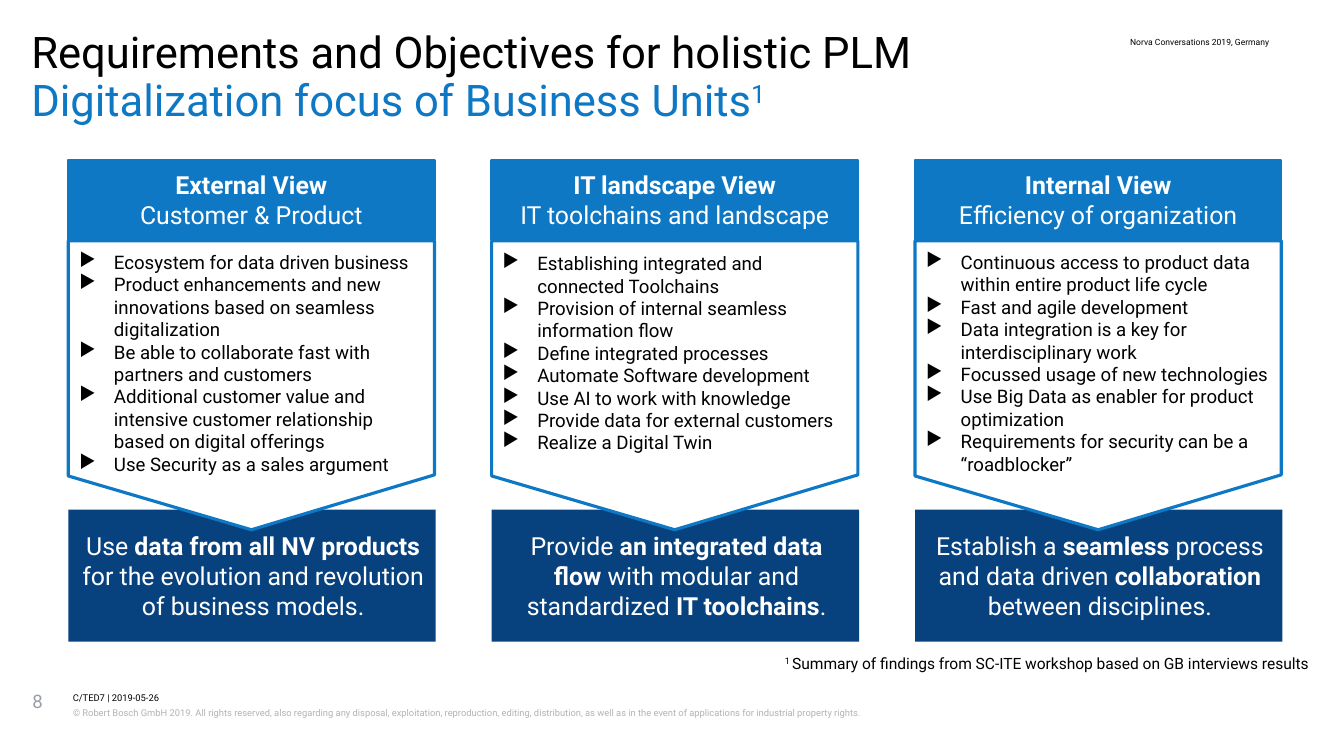
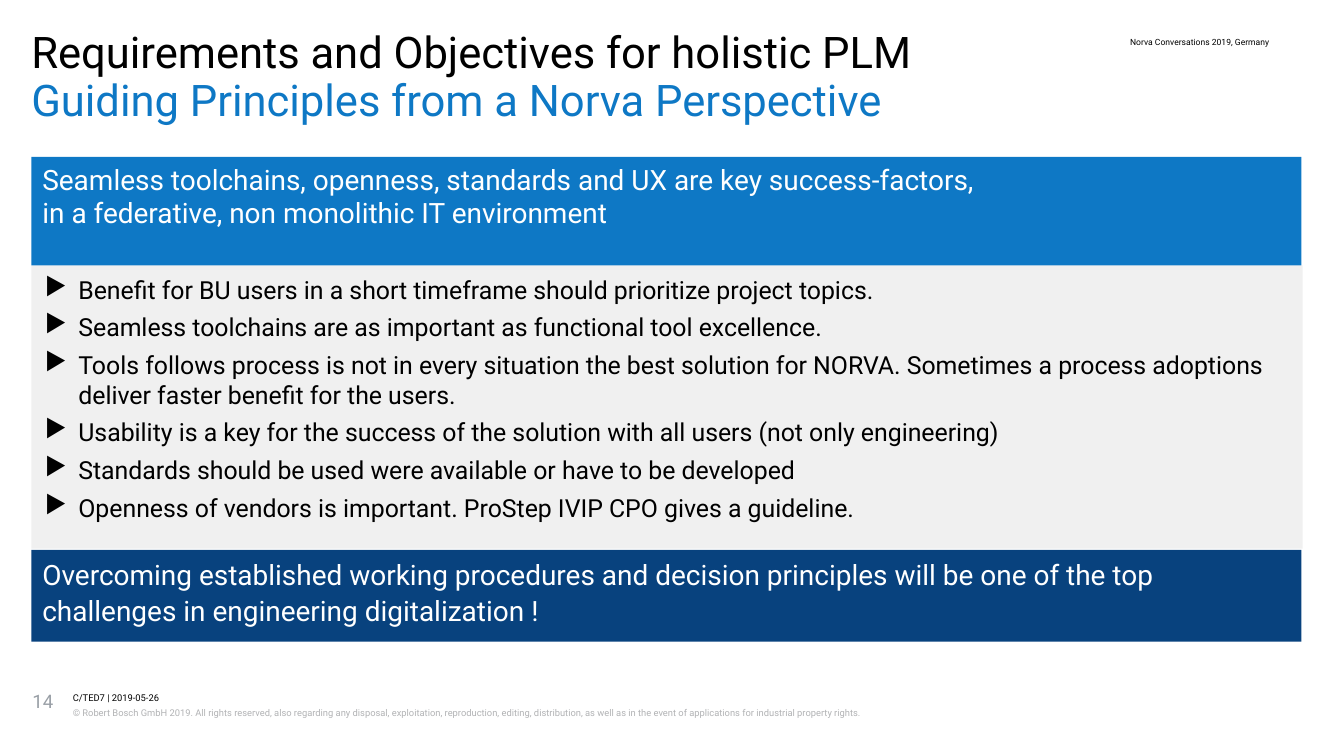
from dataclasses import dataclass
from typing import Any, NamedTuple

from lxml import etree
from pptx import Presentation
from pptx.dml.color import RGBColor
from pptx.enum.shapes import MSO_SHAPE
from pptx.enum.text import MSO_ANCHOR, PP_ALIGN
from pptx.oxml.ns import qn
from pptx.util import Inches, Pt

COLORS = {
    "black": "000000",
    "white": "FFFFFF",
    "blue": "0E78C5",
    "navy": "08427E",
    "panel": "F0F0F0",
    "number": "999FA6",
    "copyright": "B2B3B5",
}
FONT = "Roboto"
NO_INSETS = (0, 0, 0, 0)
DEFAULT_INSETS = (0.1, 0.05, 0.1, 0.05)


class Box(NamedTuple):
    left: float
    top: float
    width: float
    height: float

    def lengths(self) -> list[int]:
        return [Inches(value) for value in self]


class Run(NamedTuple):
    text: str
    bold: bool = False
    raised: bool = False


@dataclass(frozen=True)
class TextStyle:
    size: float
    color: str = "black"
    align: Any = PP_ALIGN.LEFT
    anchor: Any = MSO_ANCHOR.TOP
    insets: tuple = DEFAULT_INSETS
    line_spacing: Any = None
    space_before: float = 0
    space_after: float = 0
    indent: float = 0
    bullet: str = ""


@dataclass(frozen=True)
class View:
    name: str
    subject: str
    needs: list
    goal: list
    needs_top: float = 2.19


TITLE = TextStyle(28, insets=NO_INSETS, line_spacing=0.89)
SUBTITLE = TextStyle(28, "blue", insets=NO_INSETS, line_spacing=0.89)
EVENT = TextStyle(5.5, insets=(0, 0.02, 0, 0), line_spacing=Pt(9))
DEPARTMENT = TextStyle(6, insets=NO_INSETS, line_spacing=1.07, space_after=1)
COPYRIGHT = TextStyle(6, "copyright", insets=NO_INSETS, line_spacing=1.2, space_after=1)
PAGE_NUMBER = TextStyle(12, "number", insets=NO_INSETS)
VIEW_HEADER = TextStyle(16, "white", PP_ALIGN.CENTER, MSO_ANCHOR.MIDDLE,
                        (0.08, 0.05, 0.08, 0.05))
VIEW_NEEDS = TextStyle(12, anchor=MSO_ANCHOR.MIDDLE, indent=0.31, bullet="▶")
VIEW_GOAL = TextStyle(16, "white", PP_ALIGN.CENTER, MSO_ANCHOR.MIDDLE,
                      (0.12, 0.05, 0.1, 0.05))
FOOTNOTE = TextStyle(10, indent=0.78)
BAND = TextStyle(18, "white")
SPACED_BAND = TextStyle(18, "white", line_spacing=1.07)
PRINCIPLES = TextStyle(16, insets=(0.12, 0.08, 0, 0), space_before=5, indent=0.3, bullet="▶")

COLUMN_LEFT, COLUMN_PITCH, COLUMN_WIDTH = 0.61, 3.78, 3.27
HEADER_TOP, POINTER_TOP, GOAL_TOP = 1.43, 2.15, 4.55

VIEWS = [
    View(
        "External View",
        "Customer & Product",
        [
            "Ecosystem for data driven business",
            "Product enhancements and new innovations based on seamless digitalization",
            "Be able to collaborate fast with partners and customers",
            "Additional customer value and intensive customer relationship based on digital offerings",
            "Use Security as a sales argument",
        ],
        [
            Run("Use "),
            Run("data from all NV products ", bold=True),
            Run("for the evolution and revolution of business models."),
        ],
    ),
    View(
        "IT landscape View",
        "IT toolchains and landscape",
        [
            "Establishing integrated and connected Toolchains",
            "Provision of internal seamless information flow",
            "Define integrated processes",
            "Automate Software development",
            "Use AI to work with knowledge",
            "Provide data for external customers",
            "Realize a Digital Twin",
        ],
        [
            Run("Provide "),
            Run("an integrated data flow ", bold=True),
            Run("with modular and standardized "),
            Run("IT toolchains", bold=True),
            Run("."),
        ],
        needs_top=2.1,
    ),
    View(
        "Internal View",
        "Efficiency of organization",
        [
            "Continuous access to product data within entire product life cycle",
            "Fast and agile development",
            "Data integration is a key for interdisciplinary work",
            "Focussed usage of new technologies",
            "Use Big Data as enabler for product optimization",
            "Requirements for security can be a “roadblocker”",
        ],
        [
            Run("Establish a "),
            Run("seamless", bold=True),
            Run(" process and data driven "),
            Run("collaboration", bold=True),
            Run(" between disciplines."),
        ],
    ),
]

PRINCIPLE_LINES = [
    "Benefit for BU users in a short timeframe should prioritize project topics.",
    "Seamless toolchains are as important as functional tool excellence.",
    "Tools follows process is not in every situation the best solution for NORVA. "
    "Sometimes a process adoptions deliver faster benefit for the users.",
    "Usability is a key for the success of the solution with all users (not only engineering)",
    "Standards should be used were available or have to be developed",
    "Openness of vendors is important. ProStep IVIP CPO gives a guideline.",
]


def rgb(name: str) -> RGBColor:
    return RGBColor.from_string(COLORS[name])


def apply(target: Any, values: dict) -> None:
    for name, value in values.items():
        setattr(target, name, value)


def indent_paragraph(paragraph: Any, style: TextStyle) -> None:
    """Set the hanging indent and, if the style has one, the bullet."""
    properties = paragraph._p.get_or_add_pPr()
    properties.set("marL", str(Inches(style.indent)))
    properties.set("indent", str(-Inches(style.indent)))
    if style.bullet:
        bullet_color = etree.SubElement(properties, qn("a:buClr"))
        etree.SubElement(bullet_color, qn("a:srgbClr"), val=COLORS["black"])
        etree.SubElement(properties, qn("a:buChar"), char=style.bullet)


def write(shape: Any, paragraphs: list, style: TextStyle) -> None:
    """Fill a shape with paragraphs, each a string or a list of runs."""
    frame = shape.text_frame
    left, top, right, bottom = (Inches(value) for value in style.insets)
    apply(frame, {
        "word_wrap": True,
        "vertical_anchor": style.anchor,
        "margin_left": left,
        "margin_top": top,
        "margin_right": right,
        "margin_bottom": bottom,
    })
    for index, content in enumerate(paragraphs):
        paragraph = frame.add_paragraph() if index else frame.paragraphs[0]
        if style.indent:
            indent_paragraph(paragraph, style)
        apply(paragraph, {
            "alignment": style.align,
            "line_spacing": style.line_spacing,
            "space_before": Pt(style.space_before if index else 0),
            "space_after": Pt(style.space_after),
        })
        for part in [Run(content)] if isinstance(content, str) else content:
            run = paragraph.add_run()
            run.text = part.text
            apply(run.font, {"name": FONT, "size": Pt(style.size), "bold": part.bold})
            run.font.color.rgb = rgb(style.color)
            if part.raised:
                run.font._element.set("baseline", "30000")


def add_text(slide: Any, box: Box, paragraphs: list, style: TextStyle) -> None:
    write(slide.shapes.add_textbox(*box.lengths()), paragraphs, style)


def paint(shape: Any, fill: str, line: str = "", line_width: float = 0) -> None:
    shape.shadow.inherit = False
    shape.fill.solid()
    shape.fill.fore_color.rgb = rgb(fill)
    if line:
        shape.line.color.rgb = rgb(line)
        shape.line.width = Pt(line_width)
    else:
        shape.line.fill.background()


def add_band(slide: Any, box: Box, fill: str, paragraphs: list, style: TextStyle,
             line: str = "") -> None:
    band = slide.shapes.add_shape(MSO_SHAPE.RECTANGLE, *box.lengths())
    paint(band, fill, line, 1.5)
    write(band, paragraphs, style)


def add_pointer(slide: Any, left: float) -> None:
    """Draw the white column body that ends in a downward tip."""
    right, middle = left + COLUMN_WIDTH, left + COLUMN_WIDTH / 2
    corners = [(right, POINTER_TOP), (right, 4.24), (middle, 4.73), (left, 4.25)]
    builder = slide.shapes.build_freeform(Inches(left), Inches(POINTER_TOP))
    builder.add_line_segments([(Inches(x), Inches(y)) for x, y in corners], close=True)
    paint(builder.convert_to_shape(), "white", "blue", 2)


def add_view(slide: Any, view: View, left: float) -> None:
    add_band(slide, Box(left, GOAL_TOP, 3.28, 1.18), "navy", [view.goal], VIEW_GOAL)
    add_pointer(slide, left)
    add_band(slide, Box(left, HEADER_TOP, COLUMN_WIDTH, 0.71), "blue",
             [[Run(view.name, bold=True)], view.subject], VIEW_HEADER, "blue")
    add_text(slide, Box(left, view.needs_top, COLUMN_WIDTH, 2.1), view.needs, VIEW_NEEDS)


def add_framed_slide(presentation: Any, number: int, subtitle: list) -> Any:
    """Add a blank slide with the shared titles, event name and footer."""
    slide = presentation.slides.add_slide(presentation.slide_layouts[6])
    frame_texts = [
        (Box(0.65, 6.17, 10.01, 0.12), "C/TED7 | 2019-05-26", DEPARTMENT),
        (Box(0.65, 6.29, 10.01, 0.24),
         "© Robert Bosch GmbH 2019. All rights reserved, also regarding any disposal, "
         "exploitation, reproduction, editing, distribution, as well as in the event of "
         "applications for industrial property rights.", COPYRIGHT),
        (Box(10.09, 0.28, 1.85, 0.85), "Norva Conversations 2019, Germany", EVENT),
        (Box(0.28, 0.71, 11.43, 0.43), subtitle, SUBTITLE),
        (Box(0.28, 0.28, 11.43, 0.43), "Requirements and Objectives for holistic PLM", TITLE),
        (Box(0.29, 6.16, 0.32, 0.45), str(number), PAGE_NUMBER),
    ]
    for box, content, style in frame_texts:
        add_text(slide, box, [content], style)
    return slide


def add_focus_slide(presentation: Any) -> None:
    slide = add_framed_slide(presentation, 8, [
        Run("Digitalization focus of Business Units"), Run("1", raised=True)])
    for index, view in enumerate(VIEWS):
        add_view(slide, view, COLUMN_LEFT + index * COLUMN_PITCH)
    add_text(slide, Box(6.91, 5.79, 4.99, 0.27), [[
        Run("1 ", raised=True),
        Run("Summary of findings from SC-ITE workshop based on GB interviews results"),
    ]], FOOTNOTE)


def add_principles_slide(presentation: Any) -> None:
    slide = add_framed_slide(presentation, 14, [
        Run("Guiding Principles from a Norva Perspective")])
    add_band(slide, Box(0.28, 2.37, 11.35, 2.53), "panel", PRINCIPLE_LINES, PRINCIPLES)
    add_band(slide, Box(0.28, 4.91, 11.34, 0.82), "navy", [
        "Overcoming established working procedures and decision principles will be one of the top",
        "challenges in engineering digitalization !",
    ], SPACED_BAND)
    add_band(slide, Box(0.28, 1.4, 11.34, 0.97), "blue", [
        "Seamless toolchains, openness, standards and UX are key success-factors,",
        "in a federative, non monolithic IT environment",
    ], BAND)


def main() -> None:
    presentation = Presentation()
    apply(presentation, {"slide_width": Inches(12), "slide_height": Inches(6.75)})
    add_focus_slide(presentation)
    add_principles_slide(presentation)
    presentation.save("out.pptx")


if __name__ == "__main__":
    main()
